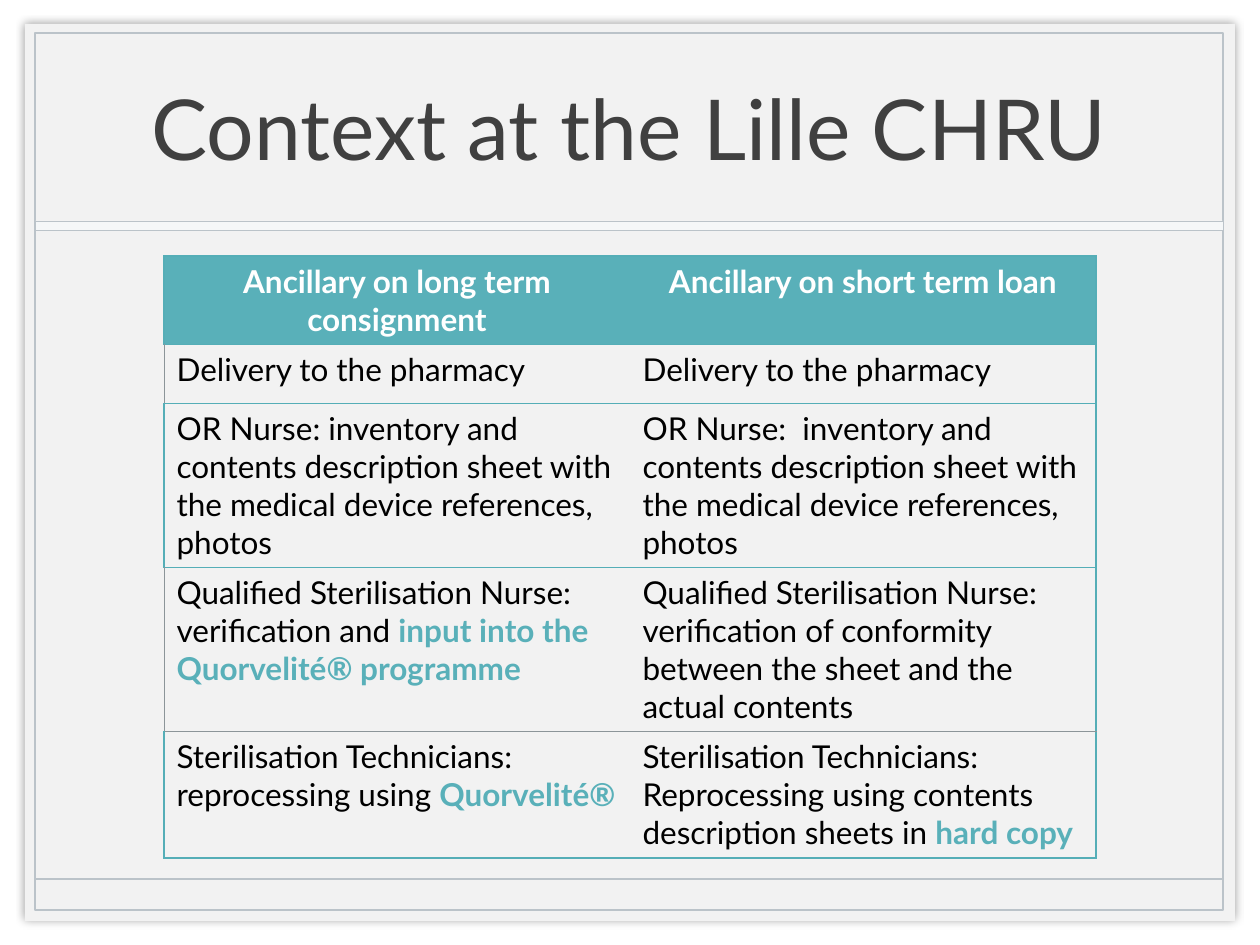
from lxml import etree
from pptx import Presentation
from pptx import util as u
from pptx.dml.color import RGBColor
from pptx.enum import shapes, text
from pptx.oxml import ns

PX = 914400 / 126
TEAL, ACCENT, GRAY, FRAME = "55AEB7", "59B0B9", "8C9599", "BBC3C9"
COLUMN_WIDTH = 466
ROW_HEIGHTS = [88, 59, 164, 163, 127]
HEADERS = ["Ancillary on long term consignment", "Ancillary on short term loan"]
STEPS = [
    [("Delivery to the pharmacy", ""), ("Delivery to the pharmacy", "")],
    [("OR Nurse: inventory and contents description sheet with "
      "the medical device references, photos", ""),
     ("OR Nurse:  inventory and contents description sheet with "
      "the medical device references, photos", "")],
    [("Qualified Sterilisation Nurse: verification and ",
      "input into the Quorvelité® programme"),
     ("Qualified Sterilisation Nurse: verification of conformity "
      "between the sheet and the actual contents", "")],
    [("Sterilisation Technicians: reprocessing using ", "Quorvelité®"),
     ("Sterilisation Technicians: Reprocessing using contents "
      "description sheets in ", "hard copy")],
]


def px(length):
    """Turn a length in px into EMU."""
    return u.Emu(round(length * PX))


def color(value):
    """Turn a hex string into a colour."""
    return RGBColor.from_string(value)


def add_run(paragraph, words, size=18, fill="000000", bold=False, align=None):
    """Add formatted words to a paragraph."""
    run = paragraph.add_run()
    run.text = words
    run.font.name = "Lato"
    run.font.size = u.Pt(size)
    run.font.bold = bold
    run.font.color.rgb = color(fill)
    if align is not None:
        paragraph.alignment = align


def add_rectangle(slide, box, fill=None, line=None, width=1):
    """Add a rectangle with an optional fill and outline."""
    shape = slide.shapes.add_shape(shapes.MSO_SHAPE.RECTANGLE, *map(px, box))
    shape.shadow.inherit = False
    if fill:
        shape.fill.solid()
        shape.fill.fore_color.rgb = color(fill)
    else:
        shape.fill.background()
    if line:
        shape.line.color.rgb = color(line)
        shape.line.width = u.Pt(width)
    else:
        shape.line.fill.background()
    return shape


def add_glow_shadow(shape):
    """Give a shape a soft, centred shadow."""
    effects = shape._element.spPr.find(ns.qn("a:effectLst"))
    shadow = etree.SubElement(effects, ns.qn("a:outerShdw"),
                              blurRad=str(u.Pt(5)), dist="0", dir="0",
                              algn="ctr", rotWithShape="0")
    tint = etree.SubElement(shadow, ns.qn("a:srgbClr"), val="000000")
    etree.SubElement(tint, ns.qn("a:alpha"), val="40000")


def add_line(slide, start, end):
    """Add a thin straight line."""
    line = slide.shapes.add_connector(
        shapes.MSO_CONNECTOR.STRAIGHT, *map(px, start + end))
    line.line.color.rgb = color(FRAME)
    line.line.width = u.Pt(1)
    etree.SubElement(line._element.spPr, ns.qn("a:effectLst"))


def add_title(slide, box, words):
    """Add the centred slide title."""
    frame = slide.shapes.add_textbox(*map(px, box)).text_frame
    frame.word_wrap = True
    frame.vertical_anchor = text.MSO_ANCHOR.MIDDLE
    add_run(frame.paragraphs[0], words, size=48, fill="404040",
            align=text.PP_ALIGN.CENTER)


def set_borders(cell, **sides):
    """Set the cell borders, where a missing colour means no line."""
    properties = cell._tc.get_or_add_tcPr()
    for index, side in enumerate("LRTB"):
        value = sides.get(side)
        width = u.Pt(0.5 if value == GRAY else 1)
        line = etree.Element(ns.qn("a:ln" + side), w=str(width))
        if value:
            fill = etree.SubElement(line, ns.qn("a:solidFill"))
            etree.SubElement(fill, ns.qn("a:srgbClr"), val=value)
        else:
            etree.SubElement(line, ns.qn("a:noFill"))
        properties.insert(index, line)


def add_steps_table(slide, left, top):
    """Add the table that compares consignment and loan."""
    rows, columns = len(ROW_HEIGHTS), len(HEADERS)
    table = slide.shapes.add_table(
        rows, columns, px(left), px(top),
        px(COLUMN_WIDTH * columns), px(sum(ROW_HEIGHTS))).table
    table.horz_banding = False
    for column in table.columns:
        column.width = px(COLUMN_WIDTH)
    rules = [TEAL, TEAL, TEAL, TEAL, GRAY, TEAL]
    for row, height in enumerate(ROW_HEIGHTS):
        table.rows[row].height = px(height)
        for column in range(columns):
            cell = table.cell(row, column)
            paragraph = cell.text_frame.paragraphs[0]
            if row == 0:
                cell.fill.solid()
                cell.fill.fore_color.rgb = color(ACCENT)
                add_run(paragraph, HEADERS[column], fill="FFFFFF", bold=True,
                        align=text.PP_ALIGN.CENTER)
            else:
                cell.fill.background()
                plain, strong = STEPS[row - 1][column]
                add_run(paragraph, plain)
                if strong:
                    add_run(paragraph, strong, fill=ACCENT, bold=True)
            edge = GRAY if row % 2 else TEAL
            set_borders(cell, L=None if column else edge,
                        R=TEAL if column == columns - 1 else None,
                        T=rules[row], B=rules[row + 1])


def main():
    """Build and save the slide."""
    presentation = Presentation()
    presentation.slide_width = px(1260)
    presentation.slide_height = px(945)
    slide = presentation.slides.add_slide(presentation.slide_layouts[6])
    add_glow_shadow(add_rectangle(slide, (25, 24, 1210, 897), fill="F2F2F2"))
    add_rectangle(slide, (35, 33, 1188, 877), line=FRAME)
    add_line(slide, (35, 879), (1223, 879))
    add_rectangle(slide, (35, 221, 1188, 9), fill="F5F7F8", line=FRAME, width=0.25)
    add_title(slide, (123, 34, 1012, 185), "Context at the Lille CHRU")
    add_steps_table(slide, 164, 256)
    presentation.save("out.pptx")


if __name__ == "__main__":
    main()
